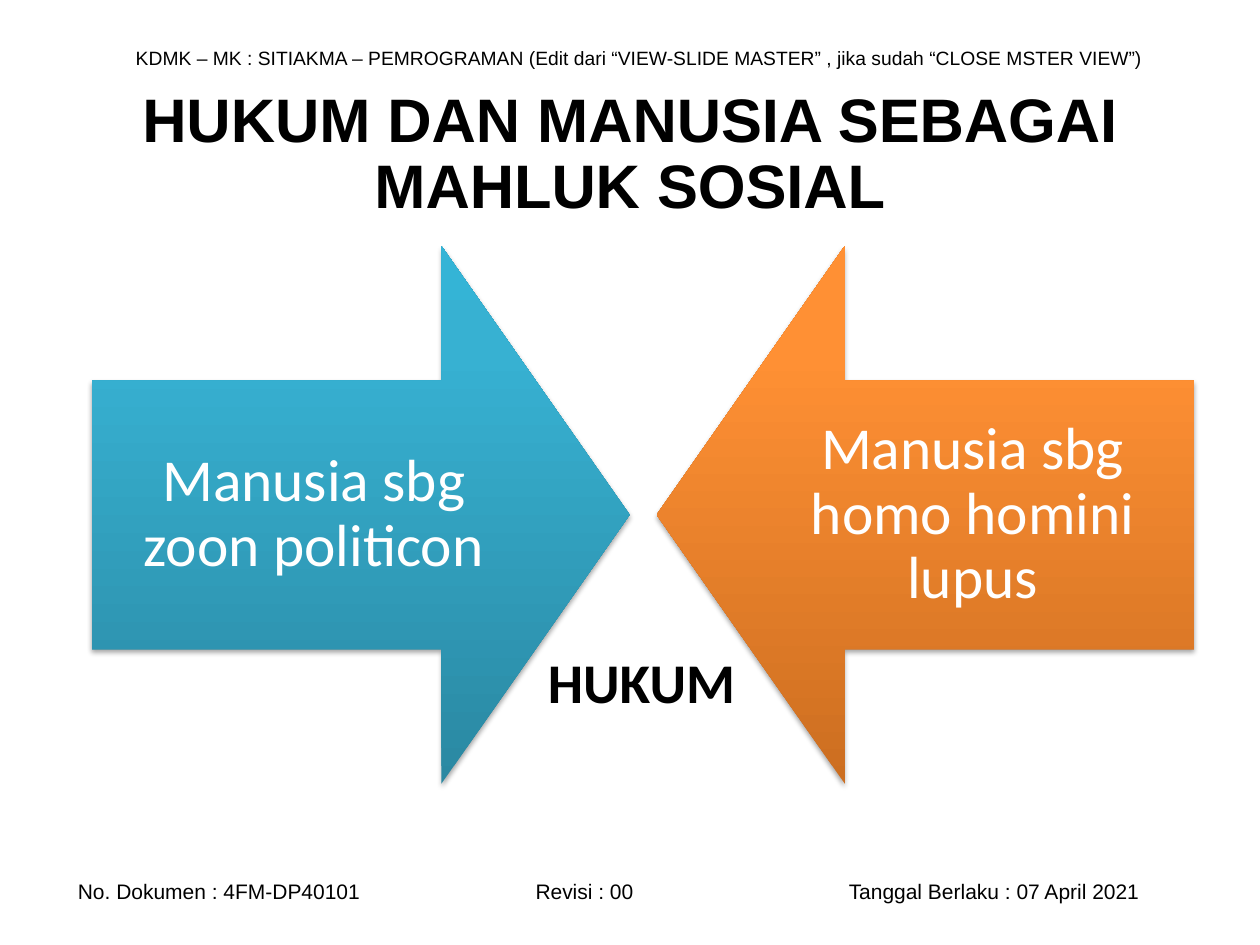
from copy import deepcopy

from lxml.etree import SubElement
from pptx import Presentation
from pptx.dml.color import RGBColor
from pptx.enum.shapes import MSO_SHAPE as Shape
from pptx.enum.text import MSO_ANCHOR as Anchor, MSO_AUTO_SIZE as AutoSize, PP_ALIGN as Align
from pptx.oxml.ns import qn
from pptx.util import Pt

BLACK, WHITE = "000000", "FFFFFF"


def color(hex_code):
    return RGBColor.from_string(hex_code)


def place(shape, box):
    shape.left, shape.top, shape.width, shape.height = (Pt(v) for v in box)


def write(frame, text, size, font, hex_code=BLACK, bold=False, align=Align.LEFT):
    """Fill the frame's first paragraph and return it."""
    paragraph = frame.paragraphs[0]
    paragraph.text = text
    paragraph.alignment = align
    paragraph.font.size, paragraph.font.name = Pt(size), font
    paragraph.font.bold = bold
    paragraph.font.color.rgb = color(hex_code)
    return paragraph


def add_label(slide, box, text, size, font, bold=False, wrap=True, anchor=Anchor.MIDDLE):
    label = slide.shapes.add_textbox(*(Pt(v) for v in box))
    frame = label.text_frame
    frame.word_wrap = wrap
    frame.vertical_anchor = anchor
    write(frame, text, size, font, bold=bold)
    return frame


def add_header(slide, box):
    add_label(slide, box, "KDMK – MK : SITIAKMA – PEMROGRAMAN (Edit dari “VIEW-SLIDE MASTER” , "
              "jika sudah “CLOSE MSTER VIEW”)", 11, "Arial")


def add_footer(slide, box):
    """Document number, revision and date, set apart by tab stops."""
    entries = ["No. Dokumen : 4FM-DP40101", "Revisi : 00", "Tanggal Berlaku : 07 April 2021"]
    frame = add_label(slide, box, "", 12, "Arial")
    frame.margin_left = Pt(30)
    paragraph = frame.paragraphs[0]
    properties = paragraph._p.get_or_add_pPr()
    tabs = properties.makeelement(qn("a:tabLst"), {})
    properties.insert(0, tabs)
    for position in (261.5, 440.5):
        SubElement(tabs, qn("a:tab"), pos=str(Pt(position)), algn="l")
    write(frame, "\t".join(entries), 12, "Arial")


def add_title(slide, box):
    title = slide.shapes.title
    place(title, box)
    frame = title.text_frame
    frame.word_wrap = True
    frame.auto_size = AutoSize.NONE
    frame.vertical_anchor = Anchor.MIDDLE
    paragraph = write(frame, "HUKUM DAN MANUSIA SEBAGAI MAHLUK SOSIAL", 35.1, "Arial",
                      bold=True, align=Align.CENTER)
    paragraph.line_spacing = 0.9


def fill_gradient(shape, shades):
    """Shade from the bottom up with stops at 0, 80 and 100 percent."""
    shape.fill.gradient()
    shape.fill.gradient_angle = 90
    first = shape._element.spPr.find(".//" + qn("a:gs"))
    first.addnext(deepcopy(first))
    for stop, position, shade in zip(shape.fill.gradient_stops, (0, 0.8, 1), shades):
        stop.position = position
        stop.color.rgb = color(shade)


def add_soft_shadow(shape):
    shape.shadow.inherit = False
    effects = shape._element.spPr.find(qn("a:effectLst"))
    shadow = SubElement(effects, qn("a:outerShdw"), blurRad=str(Pt(3.1)), dist=str(Pt(1.8)),
                        dir="5400000", rotWithShape="0")
    shade = SubElement(shadow, qn("a:srgbClr"), val=BLACK)
    SubElement(shade, qn("a:alpha"), val="35000")


def add_arrow(slide, box, kind, shades, text):
    arrow = slide.shapes.add_shape(kind, *(Pt(v) for v in box))
    arrow.adjustments[0], arrow.adjustments[1] = 0.5, 0.35
    fill_gradient(arrow, shades)
    arrow.line.fill.background()
    add_soft_shadow(arrow)
    frame = arrow.text_frame
    frame.word_wrap = True
    frame.vertical_anchor = Anchor.MIDDLE
    frame.margin_left = frame.margin_right = frame.margin_top = frame.margin_bottom = Pt(18.7)
    write(frame, text, 34, "Calibri", WHITE, align=Align.CENTER).line_spacing = 0.9


def add_opposing_arrows(slide, box):
    left, top, width, side = box
    add_arrow(slide, (left, top, side, side), Shape.RIGHT_ARROW,
              ("2A88A2", "37B1D2", "34B4D6"), "Manusia sbg zoon politicon")
    add_arrow(slide, (left + width - side, top, side, side), Shape.LEFT_ARROW,
              ("CC6E20", "FF9034", "FF9136"), "Manusia sbg homo homini lupus")
    add_label(slide, (left + 253.5, top + 226, 122.4, 46), "HUKUM", 32, "Calibri",
              bold=True, wrap=False, anchor=Anchor.TOP)


def main():
    deck = Presentation()
    deck.slide_width, deck.slide_height = Pt(720), Pt(540)
    slide = deck.slides.add_slide(deck.slide_layouts[5])
    add_header(slide, (70.5, 22.5, 601, 21))
    add_footer(slide, (14.5, 498.5, 680.5, 21.5))
    add_title(slide, (36, 44, 648, 90))
    add_opposing_arrows(slide, (52.5, 140.5, 630, 307.3))
    deck.save("out.pptx")


if __name__ == "__main__":
    main()
